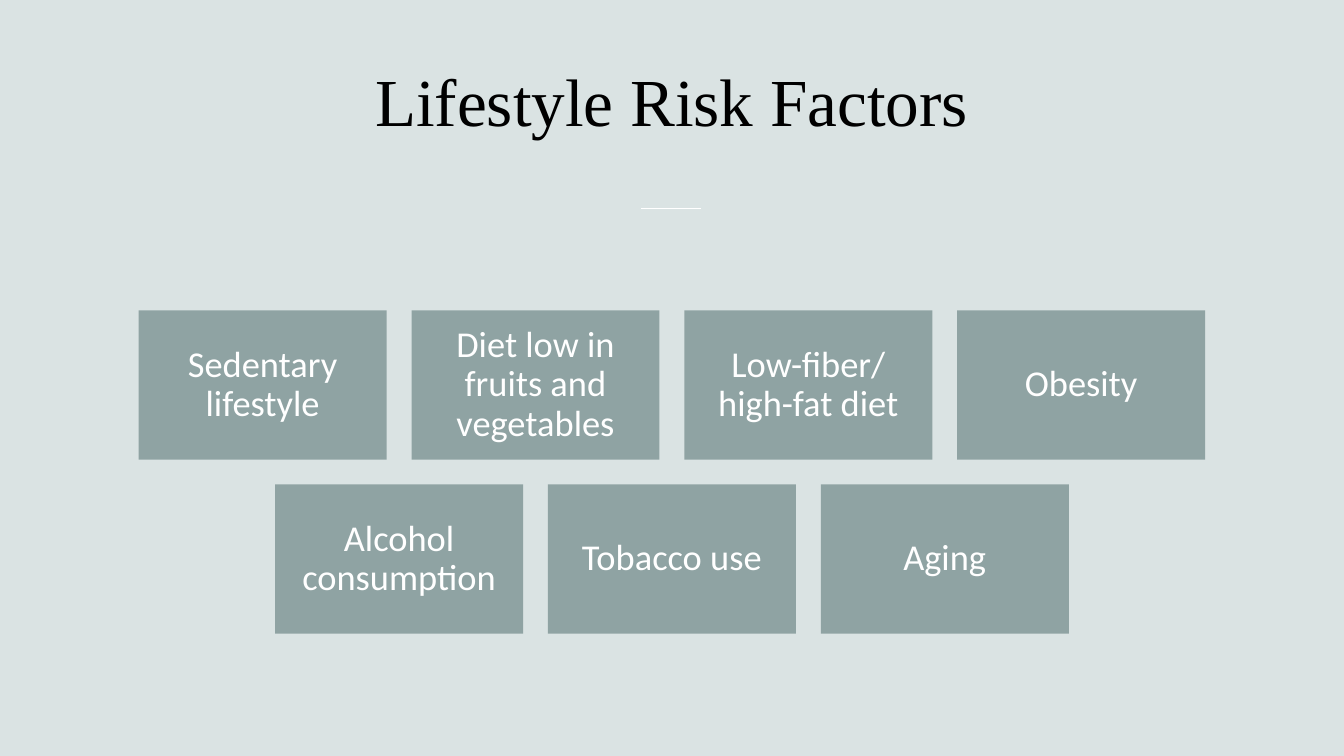
from dataclasses import dataclass

from lxml.etree import SubElement
from pptx import Presentation
from pptx.dml.color import RGBColor
from pptx.enum.shapes import MSO_CONNECTOR, MSO_SHAPE
from pptx.enum.text import MSO_ANCHOR, PP_ALIGN
from pptx.oxml.ns import qn
from pptx.util import Inches, Pt


@dataclass(frozen=True)
class Theme:
    background: RGBColor = RGBColor.from_string("DAE3E3")
    card: RGBColor = RGBColor.from_string("8FA3A3")
    light: RGBColor = RGBColor.from_string("FFFFFF")
    dark: RGBColor = RGBColor.from_string("000000")
    title_font: str = "Times New Roman"
    card_font: str = "Calibri"
    title_size: Pt = Pt(48)
    card_size: Pt = Pt(26)


def write_centered(frame, text, font_name, size, color):
    frame.text = text
    frame.word_wrap = True
    frame.vertical_anchor = MSO_ANCHOR.MIDDLE
    paragraph = frame.paragraphs[0]
    paragraph.alignment = PP_ALIGN.CENTER
    paragraph.line_spacing = 0.9
    font = paragraph.runs[0].font
    font.name = font_name
    font.size = size
    font.color.rgb = color


theme = Theme()
SLIDE_WIDTH = 13.33
CARD_WIDTH, CARD_HEIGHT = 2.46, 1.48
CARD_GAP = CARD_WIDTH / 10
CARDS_TOP = 3.08
CARD_INSET = Inches(0.11)
RISK_ROWS = [
    ["Sedentary lifestyle", "Diet low in fruits and vegetables", "Low-fiber/high-fat diet", "Obesity"],
    ["Alcohol consumption", "Tobacco use", "Aging"],
]

presentation = Presentation()
presentation.slide_width = Inches(SLIDE_WIDTH)
presentation.slide_height = Inches(7.5)
slide = presentation.slides.add_slide(presentation.slide_layouts[6])
slide.background.fill.solid()
slide.background.fill.fore_color.rgb = theme.background

title = slide.shapes.add_textbox(Inches(1.08), Inches(0.28), Inches(11.17), Inches(1.52))
write_centered(title.text_frame, "Lifestyle Risk Factors", theme.title_font, theme.title_size, theme.dark)

divider = slide.shapes.add_connector(
    MSO_CONNECTOR.STRAIGHT, Inches(6.36), Inches(2.07), Inches(6.95), Inches(2.07)
)
divider.line.color.rgb = theme.light
divider.line.width = Pt(1)
SubElement(divider._element.spPr, qn("a:effectLst"))

for row, risks in enumerate(RISK_ROWS):
    row_width = len(risks) * (CARD_WIDTH + CARD_GAP) - CARD_GAP
    row_left = (SLIDE_WIDTH - row_width) / 2
    row_top = CARDS_TOP + row * (CARD_HEIGHT + CARD_GAP)
    for column, risk in enumerate(risks):
        card = slide.shapes.add_shape(
            MSO_SHAPE.RECTANGLE,
            Inches(row_left + column * (CARD_WIDTH + CARD_GAP)),
            Inches(row_top),
            Inches(CARD_WIDTH),
            Inches(CARD_HEIGHT),
        )
        card.shadow.inherit = False
        card.fill.solid()
        card.fill.fore_color.rgb = theme.card
        card.line.fill.background()
        frame = card.text_frame
        frame.margin_left = frame.margin_right = CARD_INSET
        frame.margin_top = frame.margin_bottom = CARD_INSET
        write_centered(frame, risk, theme.card_font, theme.card_size, theme.light)

presentation.save("out.pptx")
